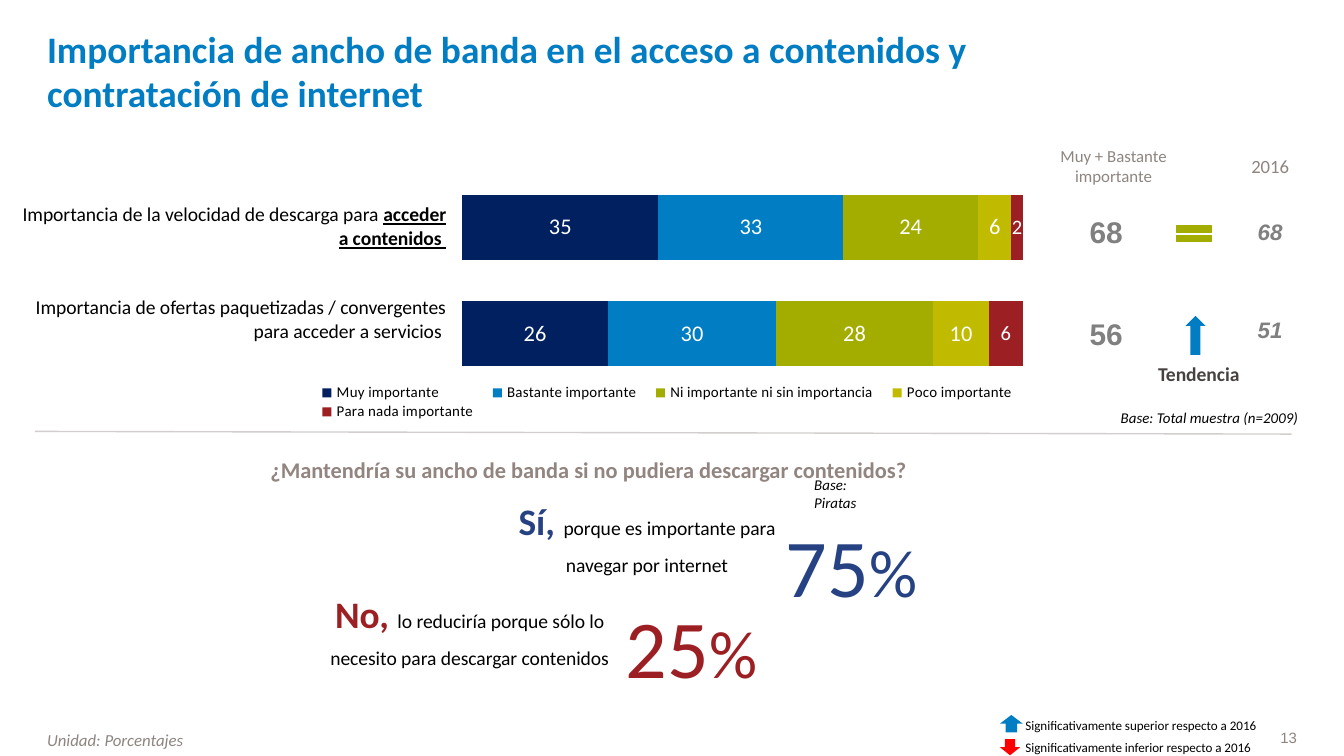
from lxml import etree
from pptx import Presentation
from pptx.chart.data import CategoryChartData
from pptx.dml.color import RGBColor
from pptx.enum.chart import XL_CHART_TYPE, XL_LEGEND_POSITION
from pptx.enum.shapes import MSO_CONNECTOR, MSO_SHAPE
from pptx.enum.text import MSO_ANCHOR, MSO_AUTO_SIZE, PP_ALIGN
from pptx.oxml import parse_xml
from pptx.oxml.ns import nsdecls, qn
from pptx.util import Inches, Pt

LEFT, CENTER, RIGHT = PP_ALIGN.LEFT, PP_ALIGN.CENTER, PP_ALIGN.RIGHT
TOP, MIDDLE, BOTTOM = MSO_ANCHOR.TOP, MSO_ANCHOR.MIDDLE, MSO_ANCHOR.BOTTOM
UP, DOWN, EQUAL = MSO_SHAPE.UP_ARROW, MSO_SHAPE.DOWN_ARROW, MSO_SHAPE.MATH_EQUAL
STACKED, LEGEND_RIGHT = XL_CHART_TYPE.BAR_STACKED, XL_LEGEND_POSITION.RIGHT
FIT_SHAPE, STRAIGHT = MSO_AUTO_SIZE.SHAPE_TO_FIT_TEXT, MSO_CONNECTOR.STRAIGHT

SLIDE_WIDTH = Inches(10)
SLIDE_HEIGHT = SLIDE_WIDTH * 9 // 16
COLUMNS = 100
BLUE, NAVY, RED, GREEN = "007DC3", "264283", "9B1F23", "A2AD00"
BLACK, WHITE, TAUPE, GRAY = "000000", "FFFFFF", "8E8581", "808080"
SERIES = [
    ("Muy importante", (35, 26), "002060", 12),
    ("Bastante importante", (33, 30), BLUE, 12),
    ("Ni importante ni sin importancia", (24, 28), GREEN, 12),
    ("Poco importante", (6, 10), "C1BB00", 12),
    ("Para nada importante", (2, 6), RED, 11),
]


def color(value):
    return RGBColor.from_string(value)


def grid(*cells):
    return [round(cell * SLIDE_WIDTH / COLUMNS) for cell in cells]


def set_font(font, size, value=BLACK, name="Calibri", bold=False, italic=False):
    font.size, font.name = Pt(size), name
    font.bold, font.italic = bold, italic
    font.color.rgb = color(value)


def format_frame(frame, anchor, margins):
    frame.word_wrap = True
    frame.vertical_anchor = anchor
    (frame.margin_left, frame.margin_top,
     frame.margin_right, frame.margin_bottom) = grid(*margins)


def add_text(slide, cells, text, size, value=BLACK, align=LEFT, anchor=TOP,
             margins=(0, 0, 0, 0), wrap=True, spacing=None, **style):
    frame = slide.shapes.add_textbox(*grid(*cells)).text_frame
    format_frame(frame, anchor, margins)
    if not wrap:
        frame.word_wrap, frame.auto_size = False, FIT_SHAPE
    paragraph = frame.paragraphs[0]
    paragraph.text, paragraph.alignment = text, align
    if spacing:
        paragraph.line_spacing = Pt(spacing)
    set_font(paragraph.font, size, value, **style)
    return paragraph


def add_answer(slide, cells, word, reason, value):
    paragraph = add_text(slide, cells, "", 10.5, align=CENTER, spacing=18)
    run = paragraph.add_run()
    run.text = word
    set_font(run.font, 20, value, bold=True)
    paragraph.add_run().text = reason


def add_percentage(slide, cells, number, value):
    paragraph = add_text(slide, cells, "", 44, value, CENTER, MIDDLE,
                         (0.4, 0.4, 0.4, 0.4))
    paragraph.add_run().text = number
    sign = paragraph.add_run()
    sign.text = "%"
    sign.font.size = Pt(36)


def add_symbol(slide, kind, cells, value, outlined=False):
    shape = slide.shapes.add_shape(kind, *grid(*cells))
    shape.shadow.inherit = False
    shape.fill.solid()
    shape.fill.fore_color.rgb = color(value)
    if outlined:
        shape.line.color.rgb = color(value)
        shape.line.width = Pt(0.75)
    else:
        shape.line.fill.background()


def add_divider(slide, cells):
    line = slide.shapes.add_connector(STRAIGHT, *grid(*cells))
    line.line.color.rgb = color("D2CECD")
    line.line.width = Pt(0.75)
    etree.SubElement(line._element.spPr, qn("a:effectLst"))


def add_column(slide, cells, rows, align, size, value=BLACK, **style):
    table = slide.shapes.add_table(len(rows), 1, *grid(*cells)).table
    table.first_row = table.horz_banding = False
    for index, texts in enumerate(rows):
        cell = table.cell(index, 0)
        cell.fill.background()
        cell.vertical_anchor = MIDDLE
        (cell.margin_left, cell.margin_top,
         cell.margin_right, cell.margin_bottom) = grid(0.1, 0.1, 0.1, 0)
        paragraph = cell.text_frame.paragraphs[0]
        paragraph.alignment = align
        set_font(paragraph.font, size, value, **style)
        for text in texts:
            paragraph.add_run().text = text
        for run in paragraph.runs[1:]:
            run.font.bold = run.font.underline = True


def layout_xml(area, cells, inner=False):
    x, y, width, height = cells
    target = '<c:layoutTarget val="inner"/>' if inner else ""
    return parse_xml(
        f'<c:layout {nsdecls("c")}><c:manualLayout>{target}'
        '<c:xMode val="edge"/><c:yMode val="edge"/>'
        f'<c:x val="{x / area[2]}"/><c:y val="{y / area[3]}"/>'
        f'<c:w val="{width / area[2]}"/><c:h val="{height / area[3]}"/>'
        '</c:manualLayout></c:layout>')


def set_layout(element, layout, position):
    for old in element.findall(qn("c:layout")):
        element.remove(old)
    element.insert(position, layout)


def add_importance_chart(slide, cells):
    data = CategoryChartData()
    data.categories = ["1", "2"]
    for name, values, _, _ in SERIES:
        data.add_series(name, values)
    chart = slide.shapes.add_chart(STACKED, *grid(*cells), data).chart
    chart.has_title = False
    set_font(chart.font, 18, name="Arial")
    chart.category_axis.reverse_order = True
    chart.category_axis.visible = chart.value_axis.visible = False
    chart.value_axis.has_major_gridlines = False
    chart.value_axis.minimum_scale, chart.value_axis.maximum_scale = 0, 100
    plot = chart.plots[0]
    plot.gap_width, plot.overlap, plot.vary_by_categories = 63, 100, False
    for series, (_, _, value, size) in zip(plot.series, SERIES):
        series.format.fill.solid()
        series.format.fill.fore_color.rgb = color(value)
        labels = series.data_labels
        labels.show_value = True
        labels.number_format, labels.number_format_is_linked = "#,##0", False
        set_font(labels.font, size, WHITE)
    chart.has_legend = True
    legend = chart.legend
    legend.position, legend.include_in_layout = LEGEND_RIGHT, False
    set_font(legend.font, 8)
    set_layout(legend._element, layout_xml(cells, (20.3, 16.8, 53.5, 2.9)), 1)
    set_layout(chart._chartSpace.chart.plotArea,
               layout_xml(cells, (31.8, 1.25, 41.7, 15.84), inner=True), 0)


def add_title(slide, cells, text):
    title = slide.shapes.title
    title.left, title.top, title.width, title.height = grid(*cells)
    format_frame(title.text_frame, MIDDLE, (0, 0, 0, 0))
    paragraph = title.text_frame.paragraphs[0]
    paragraph.text, paragraph.alignment = text, LEFT
    set_font(paragraph.font, 20, BLUE, bold=True)


def add_comparison(slide):
    add_importance_chart(slide, (2.6, 11.7, 91.4, 22.4))
    add_column(slide, (1, 13.4, 32.3, 13.8), [
        ("Importancia de la velocidad de descarga para ", "acceder a contenidos "),
        ("Importancia de ofertas paquetizadas / convergentes para acceder a servicios ",),
    ], RIGHT, 10.5)
    add_column(slide, (78.1, 13.5, 8.4, 15.2), [("68",), ("56",)], CENTER, 16,
               GRAY, name="Arial", bold=True)
    add_column(slide, (92.4, 13.6, 4.2, 14.6), [("68",), ("51",)], CENTER, 12,
               GRAY, name="Arial", bold=True, italic=True)
    add_text(slide, (77.6, 10.1, 10.5, 4.5), "Muy + Bastante importante", 9,
             TAUPE, CENTER, MIDDLE)
    add_text(slide, (92.9, 11.2, 3.2, 2.3), "2016", 10, TAUPE, CENTER, MIDDLE)
    add_symbol(slide, EQUAL, (87.1, 16.4, 3.5, 2), GREEN, outlined=True)
    add_symbol(slide, UP, (88.2, 23.5, 1.5, 2.9), BLUE)
    add_text(slide, (80.2, 27.3, 18, 1.6), "Tendencia", 10.5, "474240", CENTER,
             spacing=10, bold=True)


def add_question(slide):
    add_text(slide, (19, 33.5, 48.9, 2.8),
             "¿Mantendría su ancho de banda si no pudiera descargar contenidos?",
             12, "928580", RIGHT, MIDDLE, (0.4, 0.4, 0.4, 0.4), bold=True)
    add_percentage(slide, (57, 37.9, 12.7, 8.2), "75", NAVY)
    add_answer(slide, (38.3, 37.9, 19.7, 4.8), "Sí, ",
               "porque es importante para navegar por internet", NAVY)
    add_percentage(slide, (45.1, 43.9, 12.7, 8.2), "25", RED)
    add_answer(slide, (23.9, 44.8, 22.1, 5), "No, ",
               "lo reduciría porque sólo lo necesito para descargar contenidos", RED)


def add_notes(slide):
    for cells, text in [((82.4, 29.9, 15.2, 2.4), "Base: Total muestra (n=2009)"),
                        ((59.6, 34.9, 7.8, 2.4), "Base: Piratas")]:
        add_text(slide, cells, text, 8, margins=(1, 0.5, 1, 0.5), wrap=False,
                 italic=True)
    for top, level in [(53.4, "superior"), (55, "inferior")]:
        add_text(slide, (76.3, top, 21.9, 1.2),
                 f"Significativamente {level} respecto a 2016", 7)
    add_symbol(slide, UP, (74.4, 53.2, 1.7, 1.3), BLUE)
    add_symbol(slide, DOWN, (74.4, 55, 1.5, 1.2), "FF0000")
    add_text(slide, (3.5, 55, 67.1, 1.2), "Unidad: Porcentajes", 9, TAUPE,
             anchor=BOTTOM, margins=(0, 0, 0, 0.4), italic=True)
    add_text(slide, (82.3, 54.1, 14.2, 1.6), "13", 8, TAUPE, RIGHT, MIDDLE,
             name="Arial")


def main():
    presentation = Presentation()
    presentation.slide_width, presentation.slide_height = SLIDE_WIDTH, SLIDE_HEIGHT
    slide = presentation.slides.add_slide(presentation.slide_layouts[5])
    add_title(slide, (3.5, 2.1, 75, 6.3),
              "Importancia de ancho de banda en el acceso a contenidos y "
              "contratación de internet")
    add_comparison(slide)
    add_divider(slide, (2.6, 32.1, 96.1, 32.3))
    add_question(slide)
    add_notes(slide)
    presentation.save("out.pptx")


if __name__ == "__main__":
    main()
